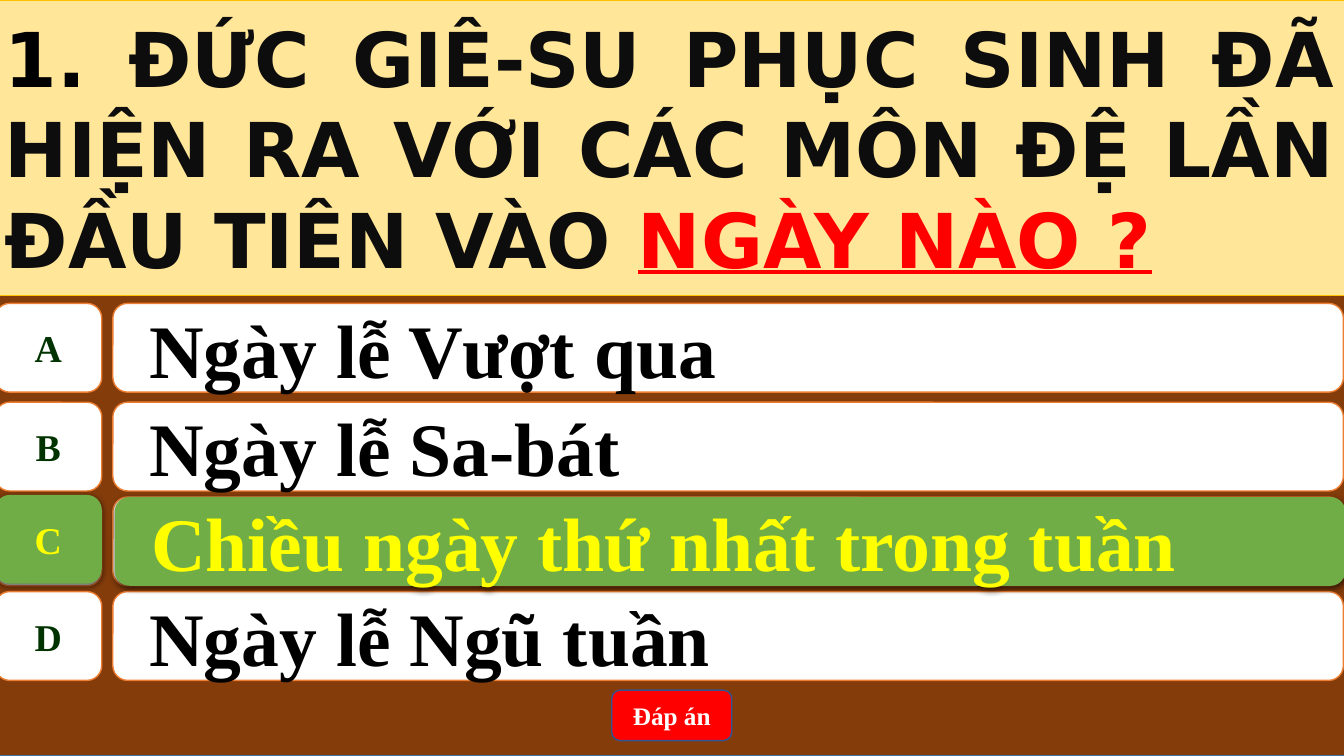
"""Build a quiz slide with one question, four answers and the right one lit."""
from lxml import etree
from pptx import Presentation
from pptx.dml.color import RGBColor
from pptx.enum.shapes import MSO_SHAPE
from pptx.enum.text import MSO_ANCHOR, PP_ALIGN
from pptx.util import Pt

RECT = MSO_SHAPE.RECTANGLE
ROUND = MSO_SHAPE.ROUNDED_RECTANGLE
BADGE = MSO_SHAPE.FLOWCHART_ALTERNATE_PROCESS
MIDDLE = MSO_ANCHOR.MIDDLE
LEFT, CENTER, JUSTIFY = PP_ALIGN.LEFT, PP_ALIGN.CENTER, PP_ALIGN.JUSTIFY

BROWN = RGBColor(0x84, 0x3C, 0x0B)
BLUE = RGBColor(0x43, 0x73, 0x9E)
NAVY = RGBColor(0x32, 0x54, 0x91)
CREAM = RGBColor(0xFF, 0xE6, 0x99)
GOLD = RGBColor(0xFF, 0xC0, 0x00)
ORANGE = RGBColor(0xED, 0x7D, 0x31)
GREEN = RGBColor(0x70, 0xAD, 0x47)
FOREST = RGBColor(0x00, 0x33, 0x00)
YELLOW = RGBColor(0xFF, 0xFF, 0x00)
RED = RGBColor(0xFF, 0x00, 0x00)
WHITE = RGBColor(0xFF, 0xFF, 0xFF)
BLACK = RGBColor(0x00, 0x00, 0x00)
INK = RGBColor(0x0D, 0x0D, 0x0D)

SERIF, SANS = "Times New Roman", "DejaVu Sans"
EDGE, HIGH = -3.6, 63.4
SHADOW = (
    '<a:outerShdw xmlns:a="http://schemas.openxmlformats.org/drawingml/2006/main"'
    ' blurRad="57150" dist="19050" dir="5400000" algn="ctr" rotWithShape="0">'
    '<a:srgbClr val="000000"><a:alpha val="63000"/></a:srgbClr></a:outerShdw>'
)

deck = Presentation()
deck.slide_width, deck.slide_height = Pt(960), Pt(540)
slide = deck.slides.add_slide(deck.slide_layouts[6])


def add_box(kind, left, top, width, height, fill, line=None, weight=1):
    box = slide.shapes.add_shape(kind, Pt(left), Pt(top), Pt(width), Pt(height))
    box.shadow.inherit = False
    box.fill.solid()
    box.fill.fore_color.rgb = fill
    if line is None:
        box.line.fill.background()
        box._element.spPr.find("{*}effectLst").append(etree.fromstring(SHADOW))
    else:
        box.line.color.rgb = line
        box.line.width = Pt(weight)
    return box


def write(box, parts, size, face, align):
    frame = box.text_frame
    frame.vertical_anchor = MIDDLE
    para = frame.paragraphs[0]
    para.alignment = align
    for text, color in parts:
        run = para.add_run()
        run.text = text
        run.font.size = Pt(size)
        run.font.name = face
        run.font.bold = True
        run.font.color.rgb = color
    return frame


add_box(RECT, EDGE, 0, 964, 540, BROWN, BLUE)

title = add_box(RECT, EDGE, 0, 964, 211, CREAM, GOLD, 0.5)
ask = [
    ("1. ", BLACK),
    ("ĐỨC GIÊ-SU PHỤC SINH ĐÃ HIỆN RA VỚI CÁC MÔN ĐỆ LẦN ĐẦU TIÊN VÀO ", INK),
    ("NGÀY NÀO ?", RED),
]
frame = write(title, ask, 54, SANS, JUSTIFY)
frame.paragraphs[0].runs[-1].font.underline = True

right = "Chiều ngày thứ nhất trong tuần"
plain = (WHITE, ORANGE, FOREST, BLACK)
lit = (GREEN, None, YELLOW, YELLOW)
rows = [
    ("A", "Ngày lễ Vượt qua", 216.7, 216.7, 80.6, plain),
    ("B", "Ngày lễ Sa-bát", 287.3, 287.3, 80.6, plain),
    ("C", right, 355, 355, 80.6, plain),
    ("D", "Ngày lễ Ngũ tuần", 422.6, 422.6, 80.6, plain),
    ("C", right, 353.5, 355, 82, lit),
]
for mark, answer, high, top, left, (fill, line, tint, ink) in rows:
    bar = add_box(ROUND, left, top, 879, HIGH, fill, line)
    frame = write(bar, [(answer, ink)], 54, SERIF, LEFT)
    frame.margin_left = Pt(23)
    badge = add_box(BADGE, EDGE, high, 76.3, HIGH, fill, line)
    frame = write(badge, [(mark, tint)], 27, SERIF, CENTER)
    frame.word_wrap = False

button = add_box(ROUND, 437, 493, 85.7, 36, RED, NAVY)
write(button, [("Đáp án", WHITE)], 18, SERIF, CENTER)

deck.save("out.pptx")
